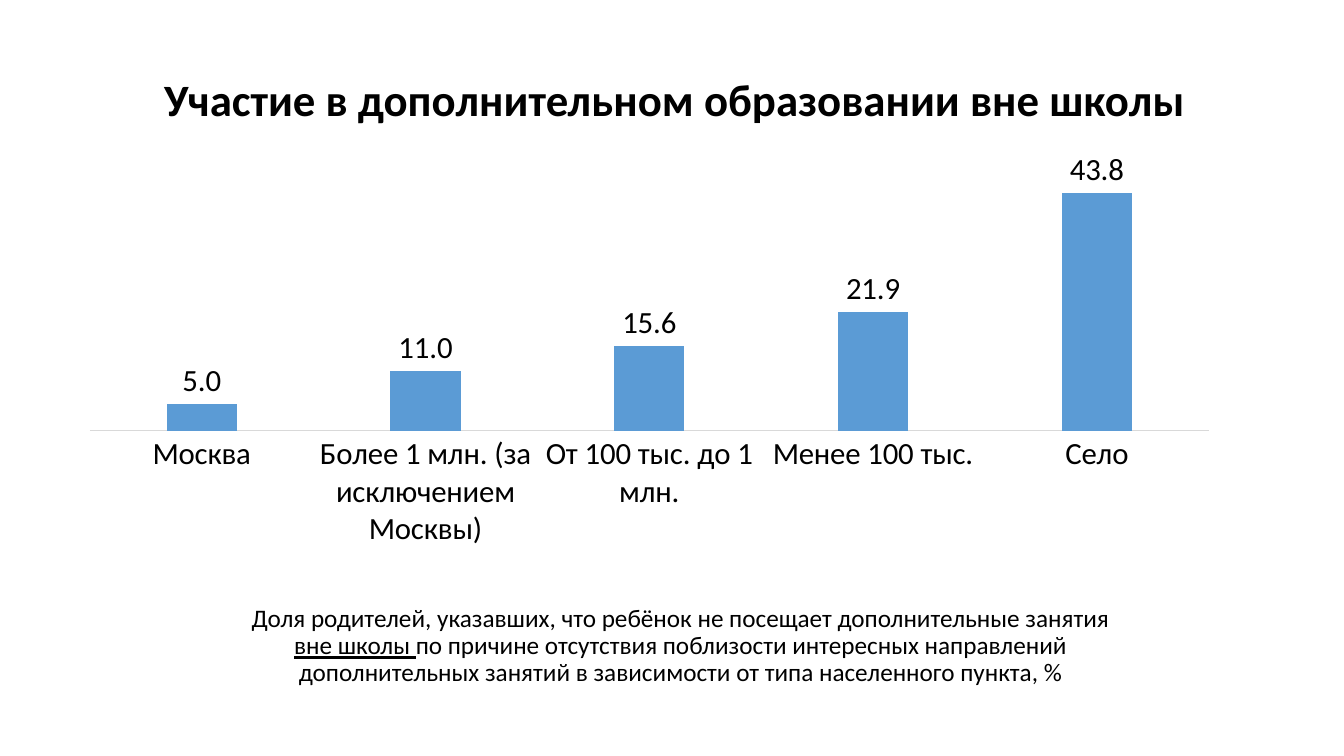
from pptx import Presentation
from pptx.chart.data import CategoryChartData
from pptx.dml.color import RGBColor
from pptx.enum.chart import XL_CHART_TYPE, XL_LABEL_POSITION, XL_TICK_MARK
from pptx.enum.text import MSO_ANCHOR, PP_ALIGN
from pptx.util import Inches, Pt

COLUMNS = XL_CHART_TYPE.COLUMN_CLUSTERED
LABEL_ABOVE = XL_LABEL_POSITION.OUTSIDE_END
NO_TICKS = XL_TICK_MARK.NONE
BOTTOM, TOP = MSO_ANCHOR.BOTTOM, MSO_ANCHOR.TOP
CENTER = PP_ALIGN.CENTER

# Content
TITLE = "Участие в дополнительном образовании вне школы"
CAPTION = [  # (text, underlined)
    ("Доля родителей, указавших, что ребёнок не посещает дополнительные занятия ", False),
    ("вне школы ", True),
    ("по причине отсутствия поблизости интересных направлений дополнительных "
     "занятий в зависимости от типа населенного пункта, %", False),
]
SHARES = {
    "Москва": 5,
    "Более 1 млн. (за исключением Москвы)": 11,
    "От 100 тыс. до 1 млн.": 15.6,
    "Менее 100 тыс.": 21.9,
    "Село": 43.8,
}


class Theme:
    font = "Calibri"
    ink = RGBColor.from_string("000000")
    bar = RGBColor.from_string("5B9BD5")
    axis = RGBColor.from_string("D9D9D9")
    title_size, label_size, caption_size = Pt(32), Pt(22), Pt(18)


# Layout: left, top, width, height in inches
WIDTH, HEIGHT = 13.33, 7.5
TITLE_AREA = (1.17, 0.3, 11.05, 1)
CHART_AREA = (0.66, 1.5, 11.56, 4.02)
CAPTION_AREA = (2.24, 5.96, 9.02, 1.2)


def style(font, size, bold=False):
    font.name, font.size, font.bold = Theme.font, size, bold
    font.color.rgb = Theme.ink


def add_text(page, area, spans, size, anchor, bold=False):
    frame = page.shapes.add_textbox(*map(Inches, area)).text_frame
    frame.word_wrap = True
    frame.vertical_anchor = anchor
    para = frame.paragraphs[0]
    para.alignment = CENTER
    para.line_spacing = 0.9
    for text, underlined in spans:
        span = para.add_run()
        span.text = text
        style(span.font, size, bold)
        span.font.underline = underlined


def add_share_chart(page):
    data = CategoryChartData(number_format="0.0")
    data.categories = list(SHARES)
    data.add_series("Доля родителей, %", list(SHARES.values()))
    chart = page.shapes.add_chart(COLUMNS, *map(Inches, CHART_AREA), data).chart
    chart.has_legend = chart.has_title = False
    style(chart.font, Theme.label_size)

    # Bars and their values
    plot = chart.plots[0]
    plot.gap_width, plot.overlap = 219, -27
    plot.vary_by_categories = False
    fill = plot.series[0].format.fill
    fill.solid()
    fill.fore_color.rgb = Theme.bar
    plot.has_data_labels = True
    labels = plot.data_labels
    labels.show_value = True
    labels.position = LABEL_ABOVE
    labels.number_format, labels.number_format_is_linked = "0.0", False
    style(labels.font, Theme.label_size)

    # Axes
    values = chart.value_axis
    values.visible = values.has_major_gridlines = False
    values.minimum_scale, values.maximum_scale = 0, 50
    places = chart.category_axis
    places.major_tick_mark = places.minor_tick_mark = NO_TICKS
    places.format.line.color.rgb = Theme.axis
    places.format.line.width = Pt(0.75)
    style(places.tick_labels.font, Theme.label_size)


def main():
    deck = Presentation()
    deck.slide_width, deck.slide_height = Inches(WIDTH), Inches(HEIGHT)
    page = deck.slides.add_slide(deck.slide_layouts[6])
    add_text(page, TITLE_AREA, [(TITLE, False)], Theme.title_size, BOTTOM, bold=True)
    add_text(page, CAPTION_AREA, CAPTION, Theme.caption_size, TOP)
    add_share_chart(page)
    deck.save("out.pptx")


if __name__ == "__main__":
    main()
